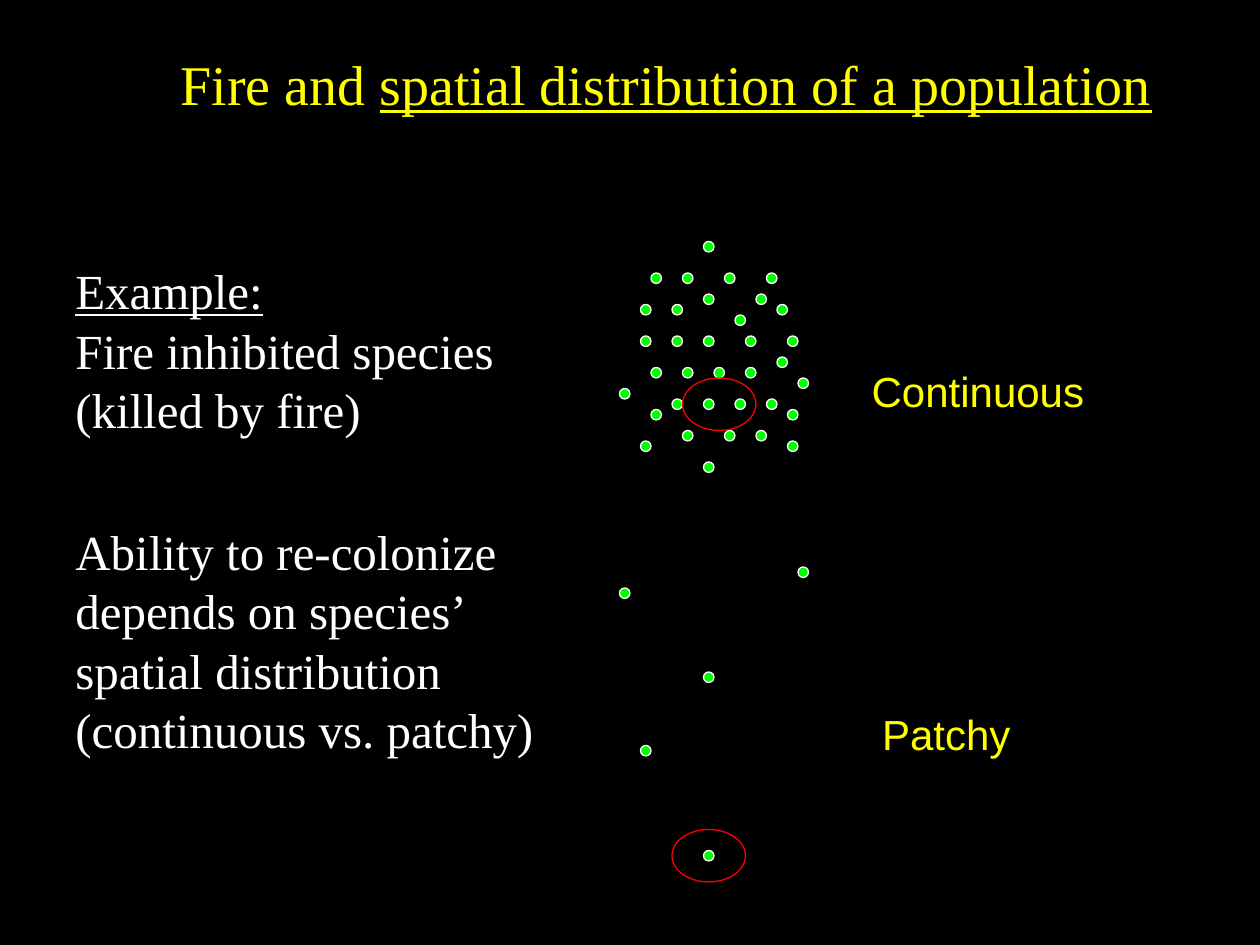
"""Build a slide on fire and the spatial distribution of a population."""
from pptx import Presentation
from pptx.dml.color import RGBColor
from pptx.enum.shapes import MSO_SHAPE
from pptx.util import Pt

BLACK = RGBColor(0x00, 0x00, 0x00)
WHITE = RGBColor(0xFF, 0xFF, 0xFF)
YELLOW = RGBColor(0xFF, 0xFF, 0x00)
GREEN = RGBColor(0x00, 0xFF, 0x00)
RED = RGBColor(0xFF, 0x00, 0x00)

SERIF = "Times New Roman"
SANS = "Arial"
GRID = 6
LINE_HEIGHT = 1.21
INDENT = 36

CONTINUOUS_ROWS = {
    23: [67],
    26: [62, 65, 69, 73],
    28: [67, 72],
    29: [61, 64, 74],
    30: [70],
    32: [61, 64, 67, 71, 75],
    34: [74],
    35: [62, 65, 68, 71],
    36: [76],
    37: [59],
    38: [64, 67, 70, 73],
    39: [62, 75],
    41: [65, 69, 72],
    42: [61, 75],
    44: [67],
}
PATCHY_ROWS = {54: [76], 56: [59], 64: [67], 71: [61], 81: [67]}


def add_run(paragraph, text, *, size, font, color, underline=False):
    run = paragraph.add_run()
    run.text = text
    run.font.size = Pt(size)
    run.font.name = font
    run.font.color.rgb = color
    run.font.underline = underline


class SlideBuilder:
    def __init__(self, slide):
        self.slide = slide
        background = slide.background.fill
        background.solid()
        background.fore_color.rgb = BLACK

    def ellipse(self, column, row, columns, rows, line, fill=None):
        box = [Pt(GRID * value) for value in (column, row, columns, rows)]
        shape = self.slide.shapes.add_shape(MSO_SHAPE.OVAL, *box)
        shape.shadow.inherit = False
        shape.line.color.rgb = line
        shape.line.width = Pt(0.75)
        if fill is None:
            shape.fill.background()
        else:
            shape.fill.solid()
            shape.fill.fore_color.rgb = fill

    def dots(self, pattern):
        for row, columns in pattern.items():
            for column in columns:
                self.ellipse(column, row, 1, 1, WHITE, GREEN)

    def fire(self, column, row):
        self.ellipse(column, row, 7, 5, RED)

    def text(self, left, top, width, height, paragraphs, *, size, font, color,
             wrap=False, indent=0):
        shape = self.slide.shapes.add_textbox(Pt(left), Pt(top), Pt(width), Pt(height))
        frame = shape.text_frame
        frame.word_wrap = wrap
        for index, runs in enumerate(paragraphs):
            paragraph = frame.add_paragraph() if index else frame.paragraphs[0]
            paragraph.line_spacing = Pt(round(size * LINE_HEIGHT))
            if indent:
                paragraph._p.get_or_add_pPr().set("marL", str(Pt(indent)))
            for text, underline in runs:
                add_run(paragraph, text, size=size, font=font, color=color,
                        underline=underline)

    def title(self, left, top, width, height, runs):
        self.text(left, top, width, height, [runs], size=32, font=SERIF, color=YELLOW)

    def body(self, top, width, height, paragraphs):
        self.text(0, top, width, height, paragraphs, size=28, font=SERIF,
                  color=WHITE, wrap=True, indent=INDENT)

    def label(self, left, top, width, text):
        self.text(left, top, width, 36, [[(text, False)]], size=24, font=SANS,
                  color=YELLOW)


def main():
    presentation = Presentation()
    presentation.slide_width = Pt(720)
    presentation.slide_height = Pt(540)
    builder = SlideBuilder(presentation.slides.add_slide(presentation.slide_layouts[6]))

    builder.title(96, 24, 574.5, 46, [
        ("Fire and ", False),
        ("spatial distribution of a population", True),
    ])
    builder.body(145, 324, 143, [
        [("Example:", True)],
        [("Fire inhibited species (killed by fire)", False)],
    ])
    builder.body(294, 336, 143, [
        [("Ability to re-colonize depends on species’ spatial distribution "
          "(continuous vs. patchy)", False)],
    ])

    builder.dots(CONTINUOUS_ROWS)
    builder.fire(65, 36)
    builder.label(491, 205, 137.5, "Continuous")

    builder.dots(PATCHY_ROWS)
    builder.fire(64, 79)
    builder.label(497, 401, 88.5, "Patchy")

    presentation.save("out.pptx")


if __name__ == "__main__":
    main()
